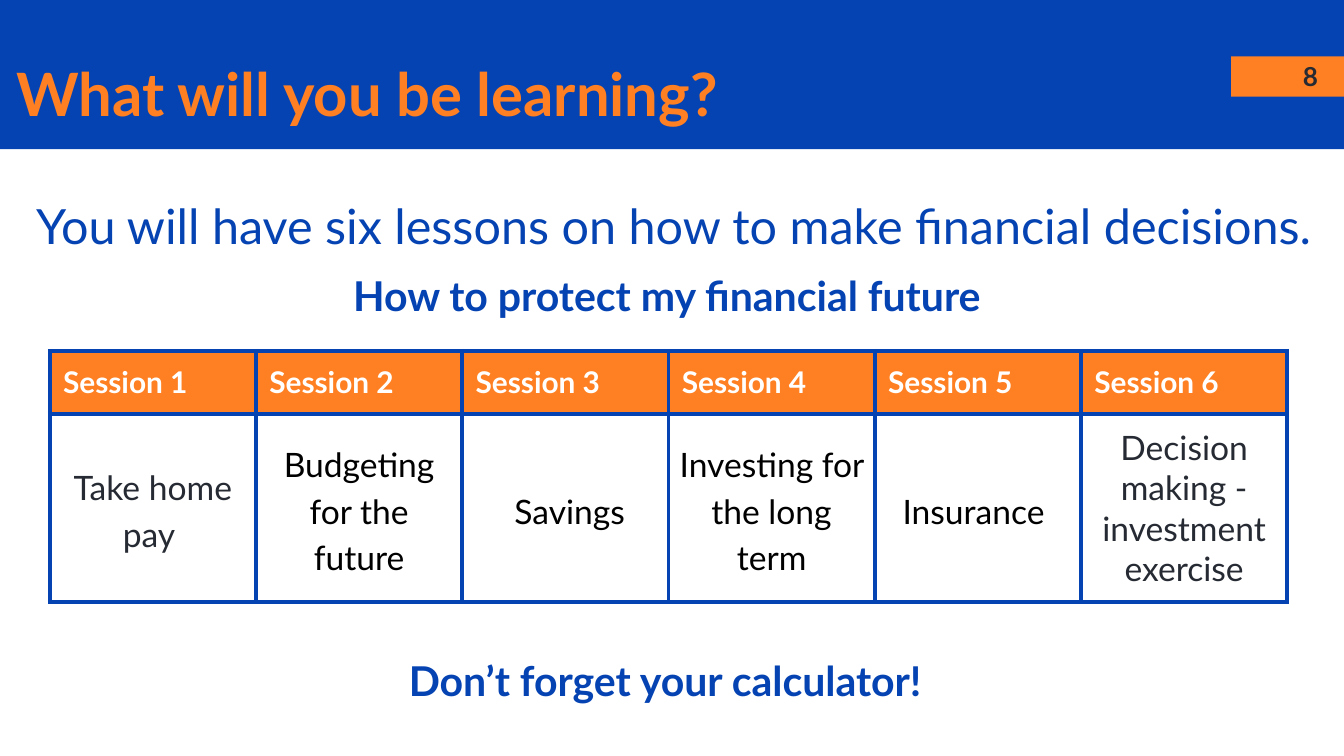
from lxml import etree
from pptx import Presentation
from pptx.dml.color import RGBColor
from pptx.enum import shapes, text
from pptx.oxml import ns
from pptx.util import Inches, Pt

BLUE, ORANGE, DARK, WHITE, BLACK = "0543B3", "FF8022", "262A33", "FFFFFF", "000000"
SESSIONS = [
    ("Take home pay ", DARK, 1.15),
    ("Budgeting for the future", BLACK, 1.15),
    (" Savings", BLACK, 1.15),
    ("Investing for the long term", BLACK, 1.15),
    ("Insurance ", BLACK, 1.15),
    ("Decision making - investment exercise", DARK, 1),
]


def color(value):
    """Turn a hex string into a colour."""
    return RGBColor.from_string(value)


def write(frame, words, size=18, fill=BLACK, bold=False, centered=False, spacing=1):
    """Put one formatted paragraph into a text frame."""
    paragraph = frame.paragraphs[0]
    paragraph.alignment = text.PP_ALIGN.CENTER if centered else text.PP_ALIGN.LEFT
    paragraph.line_spacing = spacing
    run = paragraph.add_run()
    run.text = words
    run.font.name, run.font.size, run.font.bold = "Lato", Pt(size), bold
    run.font.color.rgb = color(fill)


def place_text(holder, middle=False, inset=0.1):
    """Set the anchor and margins of a text frame or a table cell."""
    holder.vertical_anchor = text.MSO_ANCHOR.MIDDLE if middle else text.MSO_ANCHOR.TOP
    holder.margin_left = holder.margin_right = Inches(inset)
    holder.margin_top = holder.margin_bottom = Inches(inset)


def add_text(slide, box, words, middle=False, inset=0.1, **style):
    """Add a wrapping text box."""
    frame = slide.shapes.add_textbox(*map(Inches, box)).text_frame
    frame.word_wrap = True
    place_text(frame, middle, inset)
    write(frame, words, **style)


def add_band(slide, box, fill):
    """Add a plain filled rectangle."""
    shape = slide.shapes.add_shape(shapes.MSO_SHAPE.RECTANGLE, *map(Inches, box))
    shape.shadow.inherit = False
    shape.fill.solid()
    shape.fill.fore_color.rgb = color(fill)
    shape.line.fill.background()


def fill_cell(cell, words, background, middle=False, inset=0.1, **style):
    """Give a cell its borders, background and text."""
    properties = cell._tc.get_or_add_tcPr()
    for side in ("lnL", "lnR", "lnT", "lnB"):
        line = etree.SubElement(properties, ns.qn(f"a:{side}"), w=str(Pt(2.25)))
        solid = etree.SubElement(line, ns.qn("a:solidFill"))
        etree.SubElement(solid, ns.qn("a:srgbClr"), val=BLUE)
    cell.fill.solid()
    cell.fill.fore_color.rgb = color(background)
    place_text(cell, middle, inset)
    write(cell.text_frame, words, **style)


def add_sessions(slide):
    """Add the table of sessions and their topics."""
    box = map(Inches, (0.37, 2.61, 9.21, 1.87))
    table = slide.shapes.add_table(2, len(SESSIONS), *box).table
    table.first_row = table.horz_banding = False
    table.rows[0].height, table.rows[1].height = Inches(0.47), Inches(1.4)
    for index, (topic, fill, spacing) in enumerate(SESSIONS):
        fill_cell(table.cell(0, index), f"Session {index + 1}", ORANGE,
                  size=16, fill=WHITE, bold=True)
        fill_cell(table.cell(1, index), topic, WHITE, middle=True,
                  inset=0.07 if spacing > 1 else 0.1,
                  fill=fill, centered=True, spacing=spacing)


def main():
    """Build the slide and save it."""
    presentation = Presentation()
    presentation.slide_width = Inches(10)
    presentation.slide_height = Inches(10 * 9 / 16)
    slide = presentation.slides.add_slide(presentation.slide_layouts[6])
    add_band(slide, (0, 0, 10, 1.11), BLUE)
    add_band(slide, (9.16, 0.42, 0.84, 0.3), ORANGE)
    add_text(slide, (0.12, 0.34, 8.78, 0.85), "What will you be learning?",
             size=32, fill=ORANGE, bold=True, spacing=1.15, inset=0)
    add_text(slide, (9.49, 0.44, 0.52, 0.25), "8",
             size=14, fill=DARK, bold=True, centered=True, middle=True)
    heading = {"size": 22, "fill": BLUE, "bold": True, "centered": True}
    add_text(slide, (2.09, 1.91, 5.82, 0.57), "How to protect my financial future ", **heading)
    add_sessions(slide)
    add_text(slide, (0.17, 1.29, 9.73, 0.64),
             "You will have six lessons on how to make financial decisions.",
             size=26, fill=BLUE, spacing=1.15)
    add_text(slide, (2.66, 4.78, 4.58, 0.57), "Don’t forget your calculator!", **heading)
    presentation.save("out.pptx")


if __name__ == "__main__":
    main()
